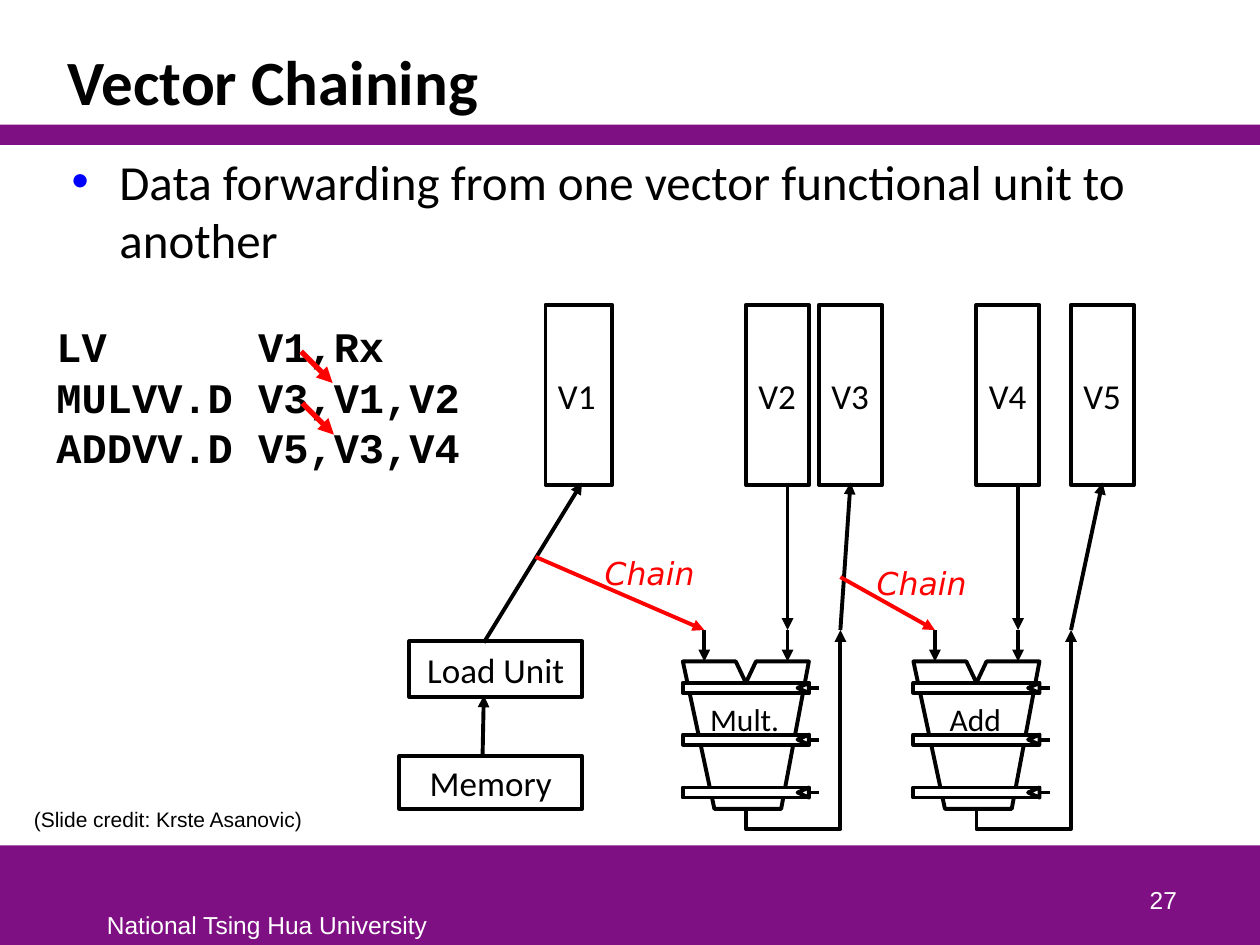
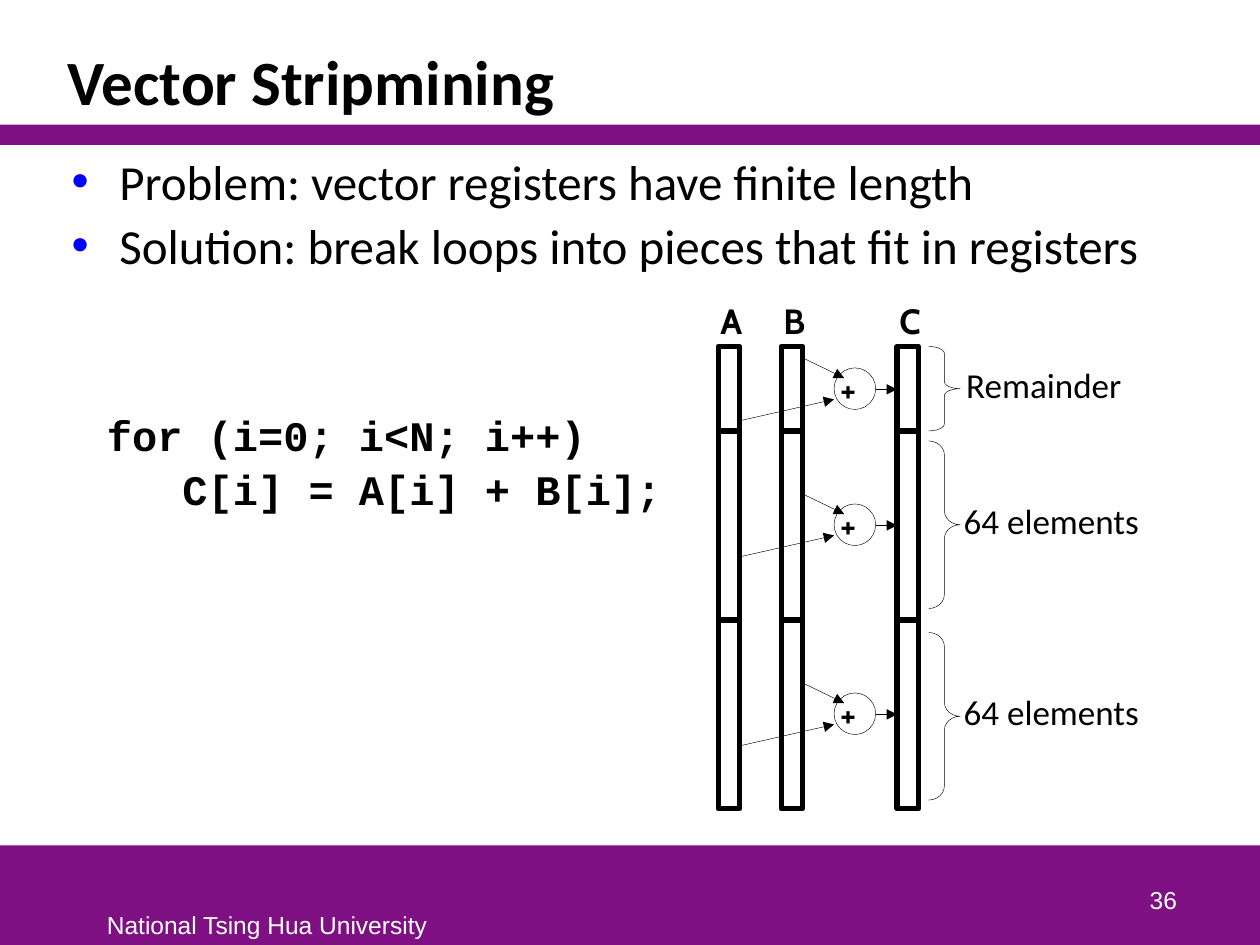
from lxml.etree import SubElement as Sub
from pptx import Presentation
from pptx.dml.color import RGBColor
from pptx.enum.shapes import MSO_CONNECTOR as Conn, MSO_SHAPE as Geo
from pptx.enum.text import MSO_ANCHOR as Anchor, MSO_AUTO_SIZE as Auto, PP_ALIGN as Align
from pptx.oxml.ns import qn
from pptx.util import Inches, Pt

hue = RGBColor.from_string
BLACK, WHITE, RED, PURPLE, BLUE = "000000", "FFFFFF", "FF0000", "7F1084", "0000FF"
MONO = "Courier New"


def box(x, y, w, h, text="", size=20, font="Calibri", color=BLACK, bold=False,
        slant=False, align=Align.LEFT, anchor=Anchor.MIDDLE, wrap=True,
        gap=0, pad=None, fill=None, line=0, geo=Geo.RECTANGLE):
    place = [Inches(n) for n in (x, y, w, h)]
    if fill or line:
        shape = slide.shapes.add_shape(geo, *place)
        shape.shadow.inherit = False
        if fill:
            shape.fill.solid()
            shape.fill.fore_color.rgb = hue(fill)
        else:
            shape.fill.background()
        if line:
            shape.line.color.rgb = hue(BLACK)
            shape.line.width = Pt(line)
        else:
            shape.line.fill.background()
    else:
        shape = slide.shapes.add_textbox(*place)
    if not text:
        return shape
    frame = shape.text_frame
    frame.word_wrap = wrap
    frame.auto_size = Auto.NONE if wrap else Auto.SHAPE_TO_FIT_TEXT
    frame.vertical_anchor = anchor
    if pad is not None:
        frame.margin_left = frame.margin_right = Inches(pad)
        frame.margin_top = frame.margin_bottom = Inches(pad)
    for i, words in enumerate(text.split("\n")):
        para = frame.add_paragraph() if i else frame.paragraphs[0]
        para.alignment = align
        if i and gap:
            para.space_before = Pt(gap)
        run = para.add_run()
        run.text = words
        run.font.size = Pt(size)
        run.font.name = font
        run.font.bold = bold
        run.font.italic = slant
        run.font.color.rgb = hue(color)
    return shape


def trace(*dots, color=BLACK, width=2.25, arrow=False, fill=None, close=False):
    dots = [(Inches(x), Inches(y)) for x, y in dots]
    if len(dots) == 2:
        shape = slide.shapes.add_connector(Conn.STRAIGHT, *dots[0], *dots[1])
    else:
        pen = slide.shapes.build_freeform(*dots[0], scale=1.0)
        pen.add_line_segments(dots[1:], close=close)
        shape = pen.convert_to_shape()
        if fill:
            shape.fill.solid()
            shape.fill.fore_color.rgb = hue(fill)
        else:
            shape.fill.background()
    shape.line.color.rgb = hue(color)
    shape.line.width = Pt(width)
    props = shape._element.spPr
    if arrow:
        Sub(props.find(qn("a:ln")), qn("a:tailEnd"), type="triangle")
    Sub(props, qn("a:effectLst"))


deck = Presentation()
deck.slide_width, deck.slide_height = Inches(10), Inches(7.5)

pages = [
    ("Vector Chaining", "27", "Data forwarding from one vector functional unit to another"),
    ("Vector Stripmining", "36", "Problem: vector registers have finite length\n"
     "Solution: break loops into pieces that fit in registers"),
]
for title, number, points in pages:
    slide = deck.slides.add_slide(deck.slide_layouts[6])
    box(0, 6.71, 10, 0.79, fill=PURPLE)
    box(0, 0.99, 10, 0.16, fill=PURPLE)
    box(0.75, 7.17, 2.76, 0.33, "National Tsing Hua University", 14, "Arial", WHITE,
        anchor=Anchor.TOP, wrap=False)
    head = box(0.44, 0.25, 8.97, 0.74, title, 36, bold=True, anchor=Anchor.BOTTOM)
    head.text_frame.paragraphs[0].line_spacing = 0.85
    body = box(0.47, 1.15, 8.94, 5.43, points, 28, anchor=Anchor.TOP, gap=3)
    for para in body.text_frame.paragraphs:
        props = para._p.get_or_add_pPr()
        props.set("marL", str(Inches(0.38)))
        props.set("indent", str(-Inches(0.38)))
        Sub(Sub(props, qn("a:buClr")), qn("a:srgbClr"), val=BLUE)
        Sub(props, qn("a:buFont"), typeface="Arial")
        Sub(props, qn("a:buChar"), char="•")
    box(7.36, 6.81, 2.08, 0.5, number, 14, "Arial", WHITE, align=Align.RIGHT,
        anchor=Anchor.BOTTOM)

slide = deck.slides[0]
box(3.17, 6, 1.45, 0.42, "Memory", align=Align.CENTER, line=2.25)
box(4.33, 2.42, 0.53, 1.43, "V1", line=2.25)
box(3.25, 5.09, 1.37, 0.44, "Load Unit", align=Align.CENTER, line=2.25)
trace((3.84, 5.1), (4.62, 3.83), arrow=True)
trace((3.83, 6), (3.84, 5.52), arrow=True)

units = [
    (5.42, "Mult.", "V2", "V3", 6.5, (4.25, 4.42), (4.7, 4.35)),
    (7.25, "Add", "V4", "V5", 8.5, (6.67, 4.58), (6.86, 4.43)),
]
for x, name, source, result, reg, start, label in units:
    trace((x, 5.25), (x + 0.25, 6.42), (x + 0.78, 6.42), (x + 1, 5.25),
          (x + 0.58, 5.25), (x + 0.5, 5.42), (x + 0.42, 5.25), close=True)
    for y in (6.25, 5.42, 5.83):
        box(x, y, 1, 0.08, fill=WHITE, line=2.25)
        trace((x + 1, y + 0.08), (x + 0.91, y + 0.04), (x + 1, y), fill=WHITE, close=True)
        trace((x + 1, y + 0.04), (x + 1.08, y + 0.04))
    for port in (x + 0.83, x + 0.17):
        trace((port, 5), (port, 5.25), arrow=True)
    trace((x + 0.5, 6.42), (x + 0.5, 6.58), (x + 1.25, 6.58), (x + 1.25, 5), arrow=True)
    box(x + 0.05, 5.51, 0.88, 0.4, name, 18, align=Align.CENTER)
    trace(start, (x + 0.17, 5), color=RED, arrow=True)
    box(x + 0.5, 2.42, 0.5, 1.43, source, line=2.25)
    trace((x + 0.83, 3.83), (x + 0.83, 5), arrow=True)
    box(reg, 2.42, 0.5, 1.43, result, line=2.25)
    trace((x + 1.25, 5), (reg + 0.25, 3.83), arrow=True)
    box(*label, 1, 0.4, "Chain", 18, "DejaVu Sans", RED, slant=True)

box(0.35, 2.49, 3.43, 1.31, "LV      V1,Rx\nMULVV.D V3,V1,V2\nADDVV.D V5,V3,V4",
    24, MONO, bold=True, wrap=False)
for x, y in ((2.39, 2.79), (2.4, 3.2)):
    trace((x, y), (x + 0.25, y + 0.25), color=RED, width=3, arrow=True)
box(0.17, 6.35, 2.35, 0.3, "(Slide credit: Krste Asanovic)", 12, "Arial",
    anchor=Anchor.TOP, wrap=False)

slide = deck.slides[1]
box(0.75, 3.19, 4.64, 0.95, "for (i=0; i<N; i++)\n   C[i] = A[i] + B[i];",
    24, MONO, bold=True, wrap=False, gap=2.4)
for name, x in (("A", 5.7), ("B", 6.2), ("C", 7.12)):
    for y, tall in ((3.42, 1.5), (4.92, 1.5), (2.75, 0.67)):
        box(x, y, 0.17, tall, line=3)
    box(x - 0.08, 2.33, 0.4, 0.43, name, 20, "Cabin", bold=True, wrap=False)

strips = [
    (2.92, 2.75, 0.67, 0.222, "Remainder", 7.57, 2.83, 1.45),
    (4, 3.5, 1.33, 0.444, "64 elements", 7.55, 3.91, 1.61),
    (5.5, 5.02, 1.33, 0.444, "64 elements", 7.55, 5.43, 1.61),
]
for y, top, tall, bend, name, left, high, wide in strips:
    box(6.62, y, 0.33, 0.33, "+", 20, "Cabin", bold=True, pad=0, line=0.25, geo=Geo.OVAL)
    for start, end in (((6.37, y - 0.08), (6.7, y + 0.08)),
                       ((5.87, y + 0.42), (6.62, y + 0.25)),
                       ((6.95, y + 0.17), (7.12, y + 0.17))):
        trace(start, end, width=0.25, arrow=True)
    brace = box(7.37, top, 0.25, tall, line=0.25, geo=Geo.RIGHT_BRACE)
    brace.adjustments[0] = bend
    brace.adjustments[1] = 0.5
    box(left, high, wide, 0.44, name, wrap=False)

deck.save("out.pptx")
